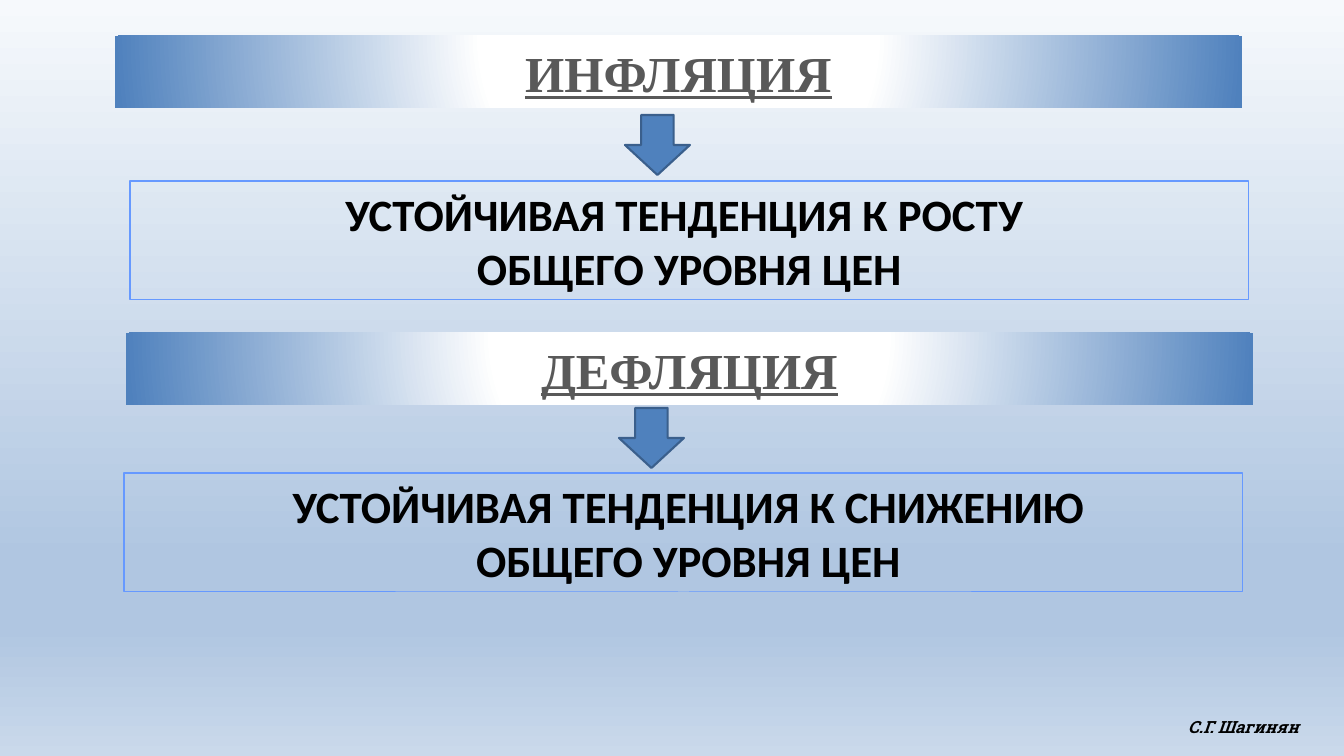
from dataclasses import dataclass

from lxml.etree import SubElement
from pptx import Presentation
from pptx.dml.color import RGBColor
from pptx.enum.shapes import MSO_SHAPE
from pptx.enum.text import MSO_ANCHOR, MSO_AUTO_SIZE, PP_ALIGN
from pptx.oxml.ns import qn
from pptx.util import Emu, Pt

EMU_PER_PIXEL = 914400 / 100.8


def px(length):
    return Emu(round(length * EMU_PER_PIXEL))


@dataclass(frozen=True)
class Theme:
    heading_font: str = "Times New Roman"
    body_font: str = "Calibri"
    author_font: str = "Roboto Slab"
    heading_size: int = 36
    body_size: int = 32
    author_size: int = 12
    heading_color: str = "595959"
    text_color: str = "000000"
    accent: str = "4F81BD"
    arrow_line: str = "3A5F8C"
    box_line: str = "6699FF"
    banner_stops: tuple = ((0, "FFFFFF"), (35, "FFFFFF"), (100, "4F81BD"))
    background_stops: tuple = ((0, "F6F9FC"), (74, "B0C6E1"), (83, "B0C6E1"), (100, "CAD9EB"))


class SlideBuilder:
    def __init__(self, slide, theme):
        self.slide = slide
        self.theme = theme

    def gradient(self, fill, owner, stops):
        """Fill with the given stops and return the gradient element, still without a direction."""
        fill.gradient()
        gradient = next(owner.iter(qn("a:gradFill")))
        for child in list(gradient):
            gradient.remove(child)
        stop_list = SubElement(gradient, qn("a:gsLst"))
        for position, color in stops:
            stop = SubElement(stop_list, qn("a:gs"), pos=str(position * 1000))
            SubElement(stop, qn("a:srgbClr"), val=color)
        return gradient

    def background(self):
        fill = self.slide.background.fill
        gradient = self.gradient(fill, self.slide.element, self.theme.background_stops)
        SubElement(gradient, qn("a:lin"), ang="5400000", scaled="0")

    def shape(self, kind, left, top, width, height, line=None, weight=1):
        shape = self.slide.shapes.add_shape(kind, px(left), px(top), px(width), px(height))
        shape.shadow.inherit = False
        if line:
            shape.line.color.rgb = RGBColor.from_string(line)
            shape.line.width = Pt(weight)
        else:
            shape.line.fill.background()
        return shape

    def add_text(self, shape, lines, font, size, color, align=PP_ALIGN.CENTER, underline=False, italic=False):
        frame = shape.text_frame
        frame.auto_size = MSO_AUTO_SIZE.SHAPE_TO_FIT_TEXT
        for index, line in enumerate(lines):
            paragraph = frame.add_paragraph() if index else frame.paragraphs[0]
            paragraph.alignment = align
            run = paragraph.add_run()
            run.text = line
            run.font.name = font
            run.font.size = Pt(size)
            run.font.bold = True
            run.font.italic = italic
            run.font.underline = underline
            run.font.color.rgb = RGBColor.from_string(color)

    def banner(self, left, top, heading):
        theme = self.theme
        banner = self.shape(MSO_SHAPE.RECTANGLE, left, top, 1127, 72)
        gradient = self.gradient(banner.fill, banner.element, theme.banner_stops)
        circle = SubElement(gradient, qn("a:path"), {"path": "circle"})
        SubElement(circle, qn("a:fillToRect"), l="50000", t="-80000", r="50000", b="180000")
        self.add_text(banner, [heading], theme.heading_font, theme.heading_size,
                      theme.heading_color, underline=True)

    def arrow(self, left, top):
        arrow = self.shape(MSO_SHAPE.DOWN_ARROW, left, top, 65, 60, self.theme.arrow_line, 1.5)
        arrow.fill.solid()
        arrow.fill.fore_color.rgb = RGBColor.from_string(self.theme.accent)

    def definition(self, left, top, lines):
        theme = self.theme
        box = self.shape(MSO_SHAPE.RECTANGLE, left, top, 1119, 119, theme.box_line, 0.75)
        box.fill.background()
        box.text_frame.vertical_anchor = MSO_ANCHOR.MIDDLE
        self.add_text(box, lines, theme.body_font, theme.body_size, theme.text_color)

    def author(self, left, top, name):
        theme = self.theme
        box = self.slide.shapes.add_textbox(px(left), px(top), px(145), px(30))
        box.text_frame.word_wrap = False
        self.add_text(box, [name], theme.author_font, theme.author_size, theme.text_color,
                      align=PP_ALIGN.LEFT, italic=True)


def main():
    presentation = Presentation()
    presentation.slide_width, presentation.slide_height = px(1344), px(756)
    blank_layout = presentation.slide_layouts[6]
    builder = SlideBuilder(presentation.slides.add_slide(blank_layout), Theme())

    builder.background()
    builder.banner(115, 36, "ИНФЛЯЦИЯ")
    builder.arrow(625, 115)
    builder.definition(130, 181, ["УСТОЙЧИВАЯ ТЕНДЕНЦИЯ К РОСТУ ", "ОБЩЕГО УРОВНЯ ЦЕН"])
    builder.banner(126, 333, "ДЕФЛЯЦИЯ")
    builder.arrow(619, 408)
    builder.definition(124, 473, [" УСТОЙЧИВАЯ ТЕНДЕНЦИЯ К СНИЖЕНИЮ", " ОБЩЕГО УРОВНЯ ЦЕН"])
    builder.author(1178, 712, "С.Г. Шагинян")

    presentation.save("out.pptx")


if __name__ == "__main__":
    main()
